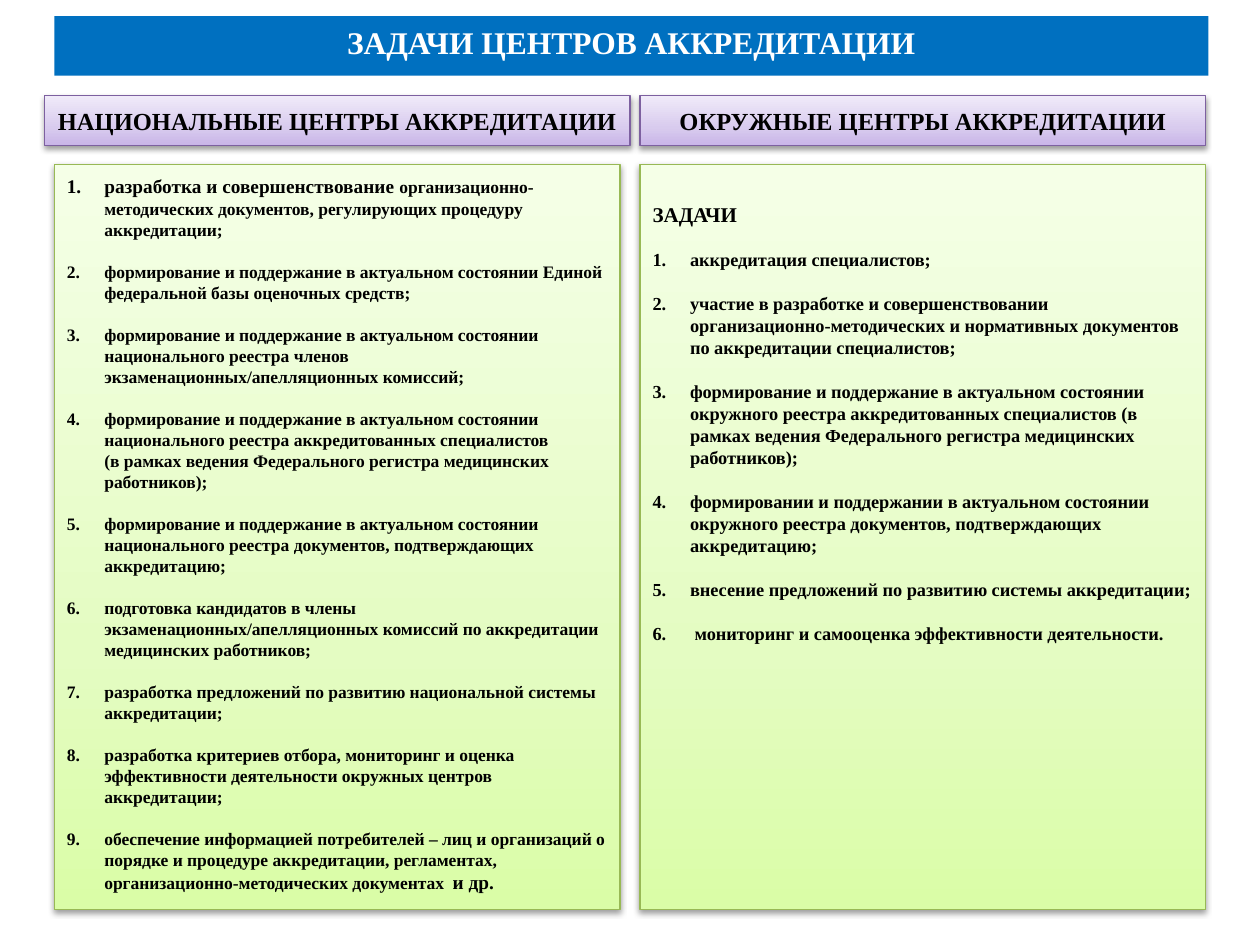
import copy

import pptx
import pptx.dml.color
import pptx.enum.text
import pptx.oxml
import pptx.oxml.ns
import pptx.util

Pt = pptx.util.Pt
RGB = pptx.dml.color.RGBColor
Align = pptx.enum.text.PP_ALIGN
Anchor = pptx.enum.text.MSO_ANCHOR
NS = pptx.oxml.ns.nsdecls("a")

WHITE = RGB(0xFF, 0xFF, 0xFF)
BLACK = RGB(0, 0, 0)
BLUE = RGB(0x00, 0x70, 0xC0)
VIOLET = RGB(0x7D, 0x60, 0xA0)
GREEN = RGB(0x98, 0xB9, 0x55)
LILAC = [RGB(0xC9, 0xB5, 0xE8), RGB(0xD8, 0xCB, 0xEE), RGB(0xF0, 0xEA, 0xF9)]
LIME = [RGB(0xDA, 0xFD, 0xA7), RGB(0xE4, 0xFC, 0xC2), RGB(0xF5, 0xFF, 0xE7)]

SHADOW = (f'<a:effectLst {NS}><a:outerShdw blurRad="39700" dist="20320" dir="5400000" '
          'rotWithShape="0"><a:srgbClr val="000000"><a:alpha val="38000"/></a:srgbClr>'
          '</a:outerShdw></a:effectLst>')


class Deck:
    font = "Times New Roman"
    hang = 21.4

    def __init__(self, show):
        # Comparison layout: title, two headings and two lists
        self.slide = show.slides.add_slide(show.slide_layouts[4])
        self.holders = {p.placeholder_format.idx: p for p in self.slide.placeholders}

    def place(self, idx, box, anchor, side=7.2, top=3.6):
        shape = self.holders[idx]
        shape.left, shape.top, shape.width, shape.height = map(Pt, box)
        frame = shape.text_frame
        frame.word_wrap = True
        frame.auto_size = pptx.enum.text.MSO_AUTO_SIZE.NONE
        frame.vertical_anchor = anchor
        frame.margin_left = frame.margin_right = Pt(side)
        frame.margin_top, frame.margin_bottom = Pt(top), Pt(3.6)
        return shape

    def style(self, para, size, color=BLACK):
        para.space_before = Pt(0)
        for run in para.runs:
            run.font.name, run.font.size = self.font, Pt(size)
            run.font.bold, run.font.color.rgb = True, color

    def shade(self, shape, colors, edge):
        fill = shape.fill
        fill.gradient()
        fill.gradient_angle = 90
        first = shape.element.spPr.find(".//" + pptx.oxml.ns.qn("a:gs"))
        first.addnext(copy.deepcopy(first))
        for stop, spot, color in zip(fill.gradient_stops, (0, 0.35, 1), colors):
            stop.position, stop.color.rgb = spot, color
        shape.line.color.rgb, shape.line.width = edge, Pt(0.75)
        shape.element.spPr.append(pptx.oxml.parse_xml(SHADOW))

    def title(self, text, box):
        shape = self.place(0, box, Anchor.MIDDLE)
        shape.fill.solid()
        shape.fill.fore_color.rgb = BLUE
        shape.text_frame.text = text
        para = shape.text_frame.paragraphs[0]
        para.alignment, para.line_spacing = Align.CENTER, 0.8
        self.style(para, 18, WHITE)

    def head(self, idx, text, box):
        shape = self.place(idx, box, Anchor.MIDDLE, side=4)
        self.shade(shape, LILAC, VIOLET)
        shape.text_frame.text = text
        para = shape.text_frame.paragraphs[0]
        para.alignment = Align.CENTER
        self.style(para, 14)

    def bullet(self, para, mark):
        props = para._p.get_or_add_pPr()
        shift = self.hang if mark else 0
        props.set("marL", str(Pt(shift)))
        props.set("indent", str(-Pt(shift)))
        tags = [f'<a:buFont {NS} typeface="{self.font}"/>',
                f'<a:buAutoNum {NS} type="arabicPeriod"/>'] if mark else [f'<a:buNone {NS}/>']
        for tag in tags:
            props.append(pptx.oxml.parse_xml(tag))

    def list(self, idx, items, box, size, gap, top, label=None):
        shape = self.place(idx, box, Anchor.TOP, top=top)
        self.shade(shape, LIME, GREEN)
        frame = shape.text_frame
        lines = ([label] if label else []) + items
        frame.text = "\n".join(lines)
        for para, line in zip(frame.paragraphs, lines):
            para.text = line
            para.alignment = Align.LEFT
            self.style(para, 12 if line == label else size)
            para.space_after = Pt(0 if line == lines[-1] else gap)
            self.bullet(para, line != label)
        return frame.paragraphs

    def extend(self, para, text, size):
        """Split the run so that the given part has its own size."""
        whole = para.runs[0].text
        parts = whole.partition(text)
        para.text = ""
        for part in filter(None, parts):
            para.add_run().text = part
        self.style(para, 10)
        for run in para.runs:
            if run.text == text:
                run.font.size = Pt(size)


NATION = [
    "разработка и совершенствование организационно-методических документов, "
    "регулирующих процедуру аккредитации;",
    "формирование и поддержание в актуальном состоянии Единой федеральной базы оценочных средств;",
    "формирование и поддержание в актуальном состоянии национального реестра членов "
    "экзаменационных/апелляционных комиссий;",
    "формирование и поддержание в актуальном состоянии национального реестра "
    "аккредитованных специалистов \v(в рамках ведения Федерального регистра медицинских работников);",
    "формирование и поддержание в актуальном состоянии национального реестра документов, "
    "подтверждающих аккредитацию;",
    "подготовка кандидатов в члены экзаменационных/апелляционных комиссий по аккредитации "
    "медицинских работников;",
    "разработка предложений по развитию национальной системы аккредитации;",
    "разработка критериев отбора, мониторинг и оценка эффективности деятельности "
    "окружных центров аккредитации;",
    "обеспечение информацией потребителей – лиц и организаций о порядке и процедуре "
    "аккредитации, регламентах, организационно-методических документах  и др.",
]
REGION = [
    "аккредитация специалистов;",
    "участие в разработке и совершенствовании организационно-методических и нормативных "
    "документов по аккредитации специалистов;",
    "формирование и поддержание в актуальном состоянии окружного реестра аккредитованных "
    "специалистов (в рамках ведения Федерального регистра медицинских работников);",
    "формировании и поддержании в актуальном состоянии окружного реестра документов, "
    "подтверждающих аккредитацию;",
    "внесение предложений по развитию системы аккредитации;",
    " мониторинг и самооценка эффективности деятельности.",
]


def main():
    show = pptx.Presentation()
    show.slide_width, show.slide_height = Pt(720), Pt(540)
    deck = Deck(show)

    # Title bar
    deck.title("ЗАДАЧИ ЦЕНТРОВ АККРЕДИТАЦИИ", (31, 9.2, 659.5, 34))

    # Column headings
    deck.head(1, "НАЦИОНАЛЬНЫЕ ЦЕНТРЫ АККРЕДИТАЦИИ", (25.4, 54.7, 334.6, 28.3))
    deck.head(3, "ОКРУЖНЫЕ ЦЕНТРЫ АККРЕДИТАЦИИ", (365.7, 54.7, 323.3, 28.3))

    # Task lists
    left = deck.list(2, NATION, (31, 94.1, 323.3, 425.5), 10, 12, 5.7)
    deck.extend(left[0], "разработка и совершенствование ", 11)
    deck.extend(left[-1], "и др.", 11)
    deck.list(4, REGION, (365.7, 94.1, 323.3, 425.5), 10.5, 12.5, 21, "ЗАДАЧИ")

    show.save("out.pptx")


if __name__ == "__main__":
    main()
